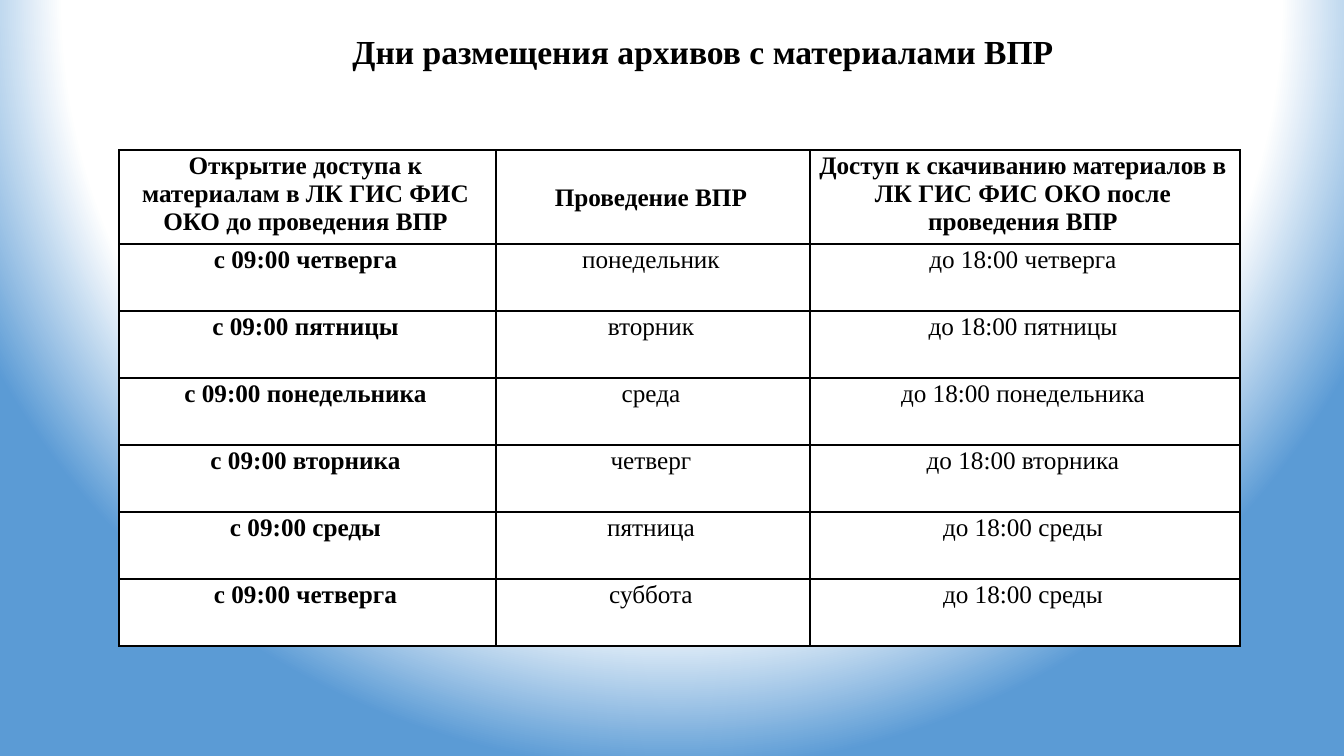
"""Build the slide with the schedule of archive publication days."""
from pptx import Presentation
from pptx import util as u
from pptx.dml.color import RGBColor
from pptx.enum import text
from pptx.oxml import parse_xml
from pptx.oxml.ns import nsdecls

PX = 12192000 / 1344
FONT = "Times New Roman"
COLORS = {"ink": "000000", "paper": "FFFFFF", "sky": "5B9BD5"}


def px(length):
    return u.Emu(round(length * PX))


def format_text(frame, size, bold):
    for para in frame.paragraphs:
        para.alignment = text.PP_ALIGN.CENTER
        for name, value in {"name": FONT, "size": u.Pt(size), "bold": bold}.items():
            setattr(para.font, name, value)
        para.font.color.rgb = RGBColor.from_string(COLORS["ink"])


deck = Presentation()
deck.slide_width, deck.slide_height = px(1344), px(756)
page = deck.slides.add_slide(deck.slide_layouts[5])

page.background.fill.solid()
solid = page.background.fill._xPr[0]
stops = "".join(
    f'<a:gs pos="{position}"><a:srgbClr val="{COLORS[color]}"/></a:gs>'
    for position, color in ((0, "paper"), (79000, "paper"), (100000, "sky"))
)
solid.getparent().replace(solid, parse_xml(
    f'<a:gradFill {nsdecls("a")} rotWithShape="1"><a:gsLst>{stops}</a:gsLst>'
    '<a:path path="circle"><a:fillToRect l="50000" t="-80000" r="50000" b="180000"/>'
    "</a:path></a:gradFill>"
))

title = page.shapes.title
for name, value in {"left": 241, "top": 26, "width": 826, "height": 50}.items():
    setattr(title, name, px(value))
frame = title.text_frame
frame.text = "Дни размещения архивов с материалами ВПР"
frame_format = {
    "margin_left": px(98), "margin_right": 0, "margin_top": px(5), "margin_bottom": px(5),
    "word_wrap": True, "auto_size": text.MSO_AUTO_SIZE.NONE,
    "vertical_anchor": text.MSO_ANCHOR.MIDDLE,
}
for name, value in frame_format.items():
    setattr(frame, name, value)
format_text(frame, 24, True)

schedule = [
    ("Открытие доступа к материалам в ЛК ГИС ФИС\nОКО до проведения ВПР",
     "Проведение ВПР",
     "Доступ к скачиванию материалов в ЛК ГИС ФИС ОКО после проведения ВПР"),
    ("с 09:00 четверга", "понедельник", "до 18:00 четверга"),
    ("с 09:00 пятницы", "вторник", "до 18:00 пятницы"),
    ("с 09:00 понедельника", "среда", "до 18:00 понедельника"),
    ("с 09:00 вторника", "четверг", "до 18:00 вторника"),
    ("с 09:00 среды", "пятница", "до 18:00 среды"),
    ("с 09:00 четверга", "суббота", "до 18:00 среды"),
]
column_widths = (377, 314, 430)
row_heights = [94] + [67] * 6
table = page.shapes.add_table(
    len(schedule), len(column_widths), px(119), px(150),
    px(sum(column_widths)), px(sum(row_heights)),
).table
table.first_row = table.horz_banding = False
for column, width in zip(table.columns, column_widths):
    column.width = px(width)
for row, height in zip(table.rows, row_heights):
    row.height = px(height)

cell_margins = {"margin_left": 8, "margin_top": 2, "margin_right": 12, "margin_bottom": 0}
for row_index, entries in enumerate(schedule):
    for column_index, entry in enumerate(entries):
        cell = table.cell(row_index, column_index)
        cell.text = entry
        for name, value in cell_margins.items():
            setattr(cell, name, px(value))
        format_text(cell.text_frame, 18, row_index == 0 or column_index == 0)
        for side in "LRTB":
            cell._tc.get_or_add_tcPr().append(parse_xml(
                f'<a:ln{side} {nsdecls("a")} w="12700"><a:solidFill>'
                f'<a:srgbClr val="{COLORS["ink"]}"/></a:solidFill></a:ln{side}>'
            ))
        cell.fill.solid()
        cell.fill.fore_color.rgb = RGBColor.from_string(COLORS["paper"])
table.cell(0, 1).vertical_anchor = text.MSO_ANCHOR.MIDDLE

deck.save("out.pptx")
